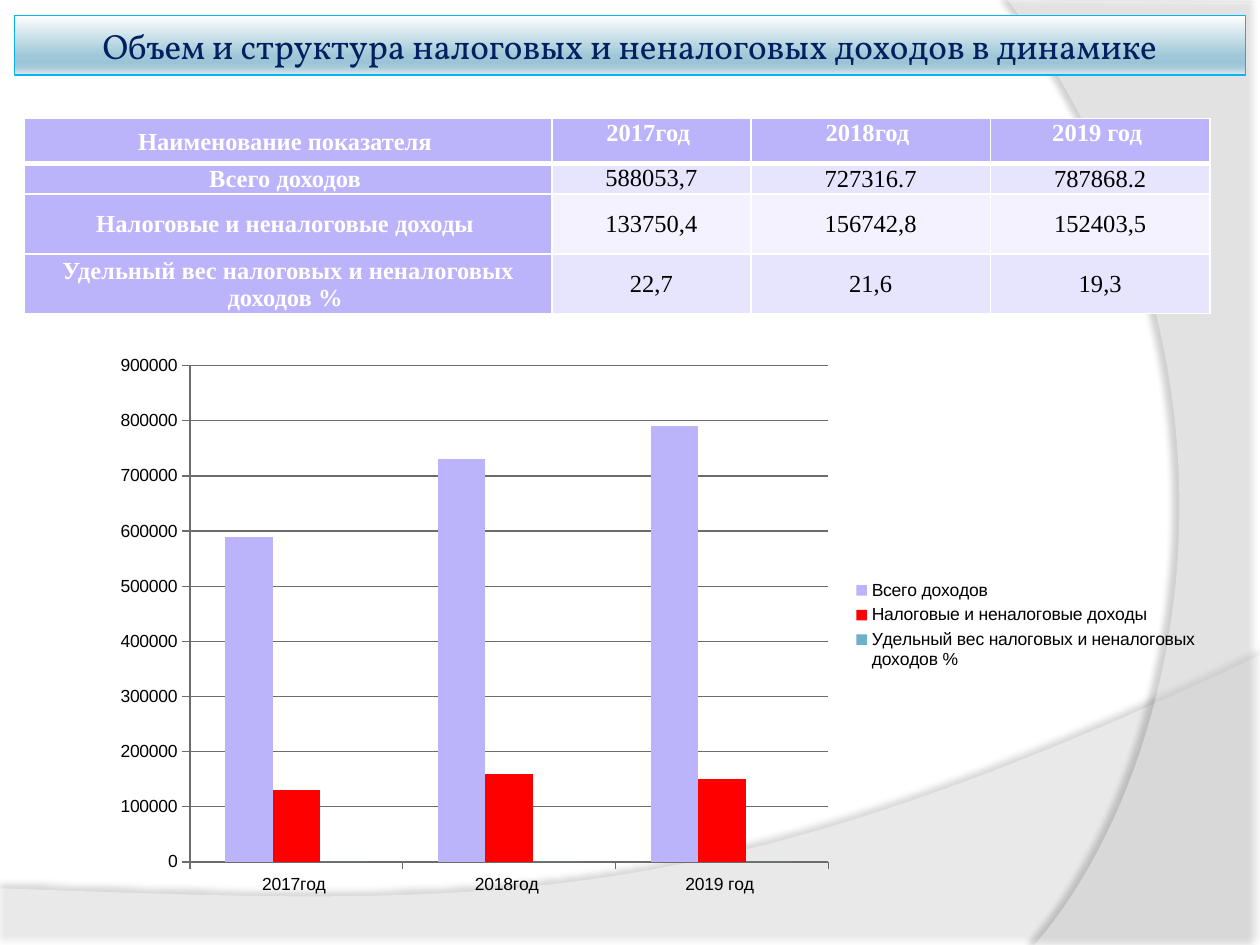
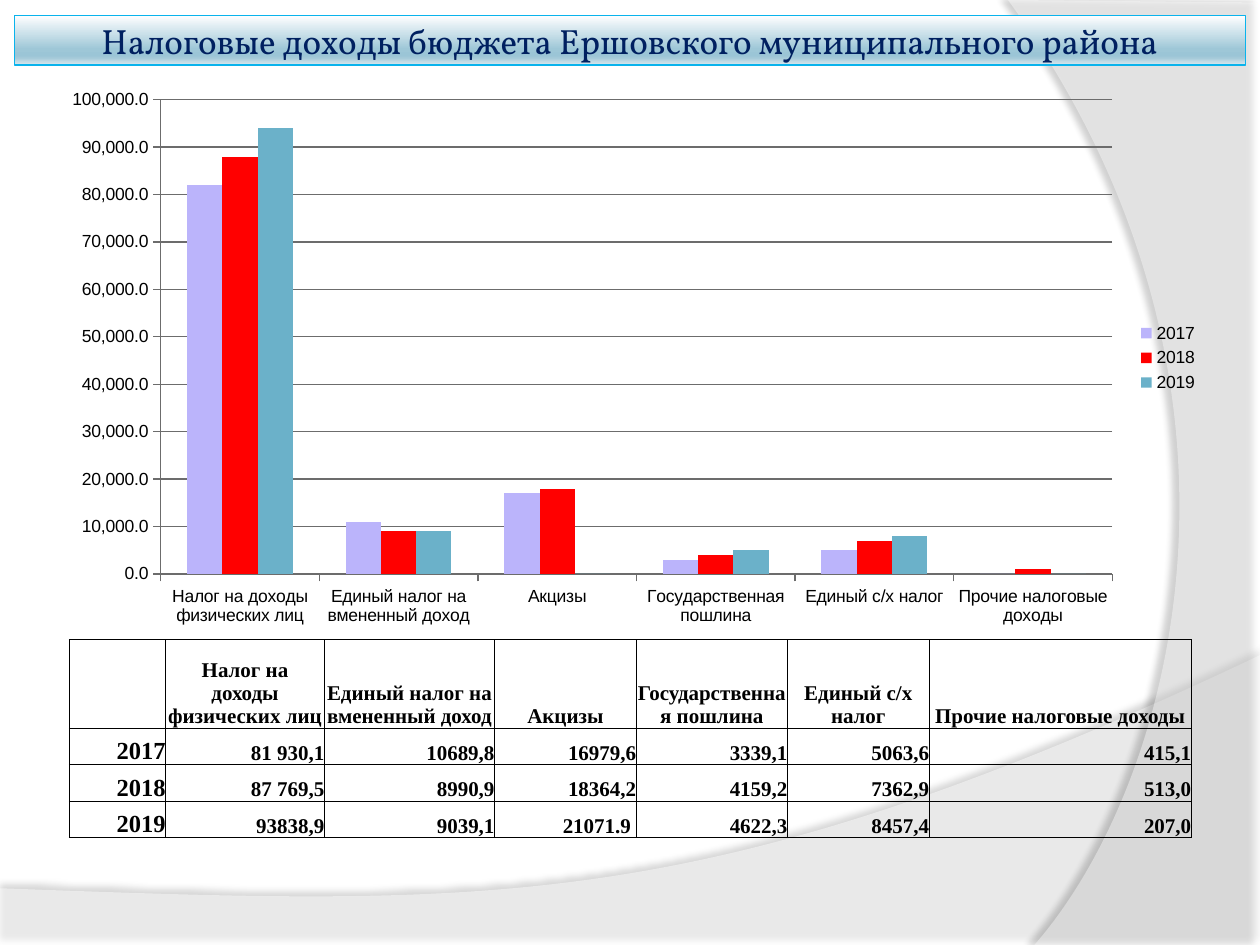
from collections.abc import Callable
from dataclasses import dataclass

from lxml import etree
from pptx import Presentation
from pptx.chart.data import CategoryChartData
from pptx.dml.color import RGBColor
from pptx.enum.chart import XL_CHART_TYPE, XL_LEGEND_POSITION, XL_TICK_MARK
from pptx.enum.text import MSO_ANCHOR, MSO_AUTO_SIZE, PP_ALIGN
from pptx.oxml.ns import qn
from pptx.util import Emu, Inches, Pt

CLUSTERED = XL_CHART_TYPE.COLUMN_CLUSTERED
LEGEND_RIGHT = XL_LEGEND_POSITION.RIGHT
TICK_OUTSIDE = XL_TICK_MARK.OUTSIDE
CENTER, RIGHT = PP_ALIGN.CENTER, PP_ALIGN.RIGHT
TOP, MIDDLE, BOTTOM = MSO_ANCHOR.TOP, MSO_ANCHOR.MIDDLE, MSO_ANCHOR.BOTTOM
NO_AUTOFIT = MSO_AUTO_SIZE.NONE

WHITE = RGBColor(0xFF, 0xFF, 0xFF)
BLACK = RGBColor(0x00, 0x00, 0x00)
NAVY = RGBColor(0x00, 0x20, 0x60)
CYAN = RGBColor(0x0A, 0xB3, 0xEC)
LILAC = RGBColor(0xBB, 0xB4, 0xFB)
LILAC_LIGHT = RGBColor(0xE7, 0xE5, 0xFD)
LILAC_PALE = RGBColor(0xF3, 0xF2, 0xFE)
RED = RGBColor(0xFF, 0x00, 0x00)
TEAL = RGBColor(0x6B, 0xB1, 0xC9)
AXIS_GREY = RGBColor(0x6C, 0x6C, 0x6C)
SERIES_COLORS = (LILAC, RED, TEAL)
BAND_STOPS = (
    (0, RGBColor(0xFE, 0xFE, 0xFF)),
    (68, RGBColor(0x9E, 0xC7, 0xD7)),
    (81, RGBColor(0x9B, 0xC5, 0xD6)),
    (86, RGBColor(0xA5, 0xCA, 0xD9)),
    (100, RGBColor(0xDA, 0xE8, 0xEE)),
)

TITLE_FONT, TABLE_FONT, CHART_FONT = "Vollkorn", "Times New Roman", "Arial"

# The slide is a grid of 100 columns by 75 rows of square cells.
GRID_COLUMNS, GRID_ROWS = 100, 75
CELL = Inches(0.1)
TITLE_ONLY = 5

Point = tuple[float, float]


@dataclass(frozen=True)
class Area:
    left: float
    top: float
    width: float
    height: float

    def emu(self) -> tuple[Emu, ...]:
        return tuple(map(grid, (self.left, self.top, self.width, self.height)))


@dataclass(frozen=True)
class Wave:
    """A backdrop outline: straight corners, then a Bezier curve from the last one."""
    corners: tuple[Point, ...]
    controls: tuple[Point, Point]
    end: Point
    opacity: int
    shadow_opacity: int
    shadow_distance: float
    shadow_angle: int


@dataclass(frozen=True)
class CellLook:
    size: int
    color: RGBColor
    bold: bool
    align: PP_ALIGN
    anchor: MSO_ANCHOR
    insets: tuple[float, float, float, float]
    border: RGBColor
    border_width: float
    bottom_width: float
    fill: RGBColor | None = None


@dataclass(frozen=True)
class Report:
    title: str
    band: Area
    indicators: list[list[str]]
    table_area: Area
    widths: tuple[float, ...]
    heights: tuple[float, ...]
    look: Callable[[int, int], CellLook]
    chart_area: Area
    axis_max: int
    axis_step: int
    axis_format: str
    unplotted: frozenset[tuple[int, int]] = frozenset()


def grid(cells: float) -> Emu:
    return Emu(round(cells * CELL))


def income_look(row: int, column: int) -> CellLook:
    heading = row == 0 or column == 0
    raised = (row == 0 and column > 0) or (row, column) == (1, 1)
    body_fill = LILAC_LIGHT if row % 2 else LILAC_PALE
    return CellLook(
        size=14, color=WHITE if heading else BLACK, bold=heading, align=CENTER,
        anchor=TOP if raised else MIDDLE, insets=(0.1, 0.1, 0.1, 0),
        border=WHITE, border_width=1, bottom_width=1 if row else 3,
        fill=LILAC if heading else body_fill)


def tax_look(row: int, column: int) -> CellLook:
    return CellLook(
        size=12 if column else 14, color=BLACK, bold=True,
        align=RIGHT if row else CENTER, anchor=BOTTOM, insets=(0, 0, 0, 0),
        border=BLACK, border_width=0.5, bottom_width=0.5)


WAVES = (
    Wave(((0, 70.5), (0, 75), (100, 75), (100, 52)),
         ((55.9, 72.9), (39.1, 71.9)), (0, 70.5), 45, 35, 3.5, 270),
    Wave(((100, 0.2), (100, 75), (82.1, 75)),
         ((93.5, 61.9), (101.8, 30)), (80, 0), 40, 45, 4, 180),
)

REPORTS = (
    Report(
        title="Объем и структура налоговых и неналоговых доходов в динамике",
        band=Area(1.15, 1.25, 97.7, 4.7),
        indicators=[
            ["Наименование показателя ", "2017год ", "2018год ", "2019 год "],
            ["Всего доходов ", "588053,7", "727316.7", "787868.2"],
            ["Налоговые и неналоговые доходы ", "133750,4", "156742,8", "152403,5"],
            ["Удельный вес налоговых и неналоговых доходов % ", "22,7", "21,6", "19,3"],
        ],
        table_area=Area(1.95, 9.4, 94.1, 15.5),
        widths=(41.85, 15.8, 19, 17.45), heights=(3.6, 2.4, 4.75, 4.75),
        look=income_look, chart_area=Area(7.8, 27.35, 88.3, 44.5),
        axis_max=900000, axis_step=100000, axis_format="General"),
    Report(
        title="Налоговые доходы бюджета Ершовского муниципального района",
        band=Area(1.15, 1.25, 97.7, 3.9),
        indicators=[
            ["", "Налог на доходы физических лиц", "Единый налог на вмененный доход",
             "Акцизы", "Государственная пошлина", "Единый с/х налог",
             "Прочие налоговые доходы"],
            ["2017", "81 930,1", "10689,8", "16979,6", "3339,1", "5063,6", "415,1"],
            ["2018", "87 769,5", "8990,9", "18364,2", "4159,2", "7362,9", "513,0"],
            ["2019", "93838,9", "9039,1", "21071.9 ", "4622,3", "8457,4", "207,0"],
        ],
        table_area=Area(5.5, 50.75, 89.05, 15.75),
        widths=(7.65, 12.6, 13.5, 11.25, 12, 11.25, 20.8), heights=(7.05, 2.9, 2.9, 2.9),
        look=tax_look, chart_area=Area(3.9, 6.25, 92.2, 44.3),
        axis_max=100000, axis_step=10000, axis_format="#,##0.0",
        unplotted=frozenset({(3, 3)})),
)


def add_color(parent, color: RGBColor, opacity: int = 100) -> None:
    node = etree.SubElement(parent, qn("a:srgbClr"), val=str(color))
    if opacity < 100:
        etree.SubElement(node, qn("a:alpha"), val=str(opacity * 1000))


def bend_last_side(shape, controls: tuple[Point, Point]) -> None:
    """Turns the last straight side of a freeform into a Bezier curve."""
    side = list(shape.element.iter(qn("a:lnTo")))[-1]
    side.tag = qn("a:cubicBezTo")
    for position, (x, y) in enumerate(controls):
        side.insert(position, etree.Element(
            qn("a:pt"), x=str(grid(x) - shape.left), y=str(grid(y) - shape.top)))


def add_wave(slide, wave: Wave):
    first, *rest = [(grid(x), grid(y)) for x, y in (*wave.corners, wave.end)]
    builder = slide.shapes.build_freeform(*first)
    builder.add_line_segments(rest, close=True)
    shape = builder.convert_to_shape()
    bend_last_side(shape, wave.controls)
    shape.fill.solid()
    shape.fill.fore_color.rgb = WHITE
    tint = shape.element.spPr.find(qn("a:solidFill"))[0]
    etree.SubElement(tint, qn("a:alpha"), val=str(wave.opacity * 1000))
    shape.line.fill.background()
    shape.shadow.inherit = False
    effects = shape.element.spPr.find(qn("a:effectLst"))
    shadow = etree.SubElement(
        effects, qn("a:outerShdw"), blurRad=str(Pt(4)),
        dist=str(Pt(wave.shadow_distance)), dir=str(wave.shadow_angle * 60000),
        algn="ctr", rotWithShape="0")
    add_color(shadow, BLACK, wave.shadow_opacity)
    return shape


def set_backdrop(layout, slide) -> None:
    """Builds the waves on a slide and moves them behind the layout's placeholders."""
    for position, wave in enumerate(WAVES, start=2):
        layout.shapes.element.insert(position, add_wave(slide, wave).element)


def add_run(paragraph, text: str, font: str, size: int, color: RGBColor,
            bold: bool = False) -> None:
    run = paragraph.add_run()
    run.text = text
    run.font.name, run.font.size, run.font.bold = font, Pt(size), bold
    run.font.color.rgb = color


def set_title(slide, text: str, band: Area) -> None:
    title = slide.shapes.title
    title.left, title.top, title.width, title.height = band.emu()
    title.fill.gradient()
    title.fill.gradient_angle = 270
    stops = title.element.spPr.find(qn("a:gradFill")).find(qn("a:gsLst"))
    stops.clear()
    for share, color in BAND_STOPS:
        add_color(etree.SubElement(stops, qn("a:gs"), pos=str(share * 1000)), color)
    title.line.color.rgb = CYAN
    title.line.width = Pt(0.75)
    frame = title.text_frame
    frame.auto_size, frame.word_wrap, frame.vertical_anchor = NO_AUTOFIT, True, MIDDLE
    frame.margin_left = frame.margin_right = grid(0.5)
    frame.margin_top = frame.margin_bottom = grid(0.5)
    frame.paragraphs[0].alignment = CENTER
    add_run(frame.paragraphs[0], text, TITLE_FONT, 20, NAVY)


def format_cell(cell, text: str, look: CellLook) -> None:
    if look.fill is None:
        cell.fill.background()
    else:
        cell.fill.solid()
        cell.fill.fore_color.rgb = look.fill
    cell.vertical_anchor = look.anchor
    (cell.margin_left, cell.margin_top,
     cell.margin_right, cell.margin_bottom) = map(grid, look.insets)
    for position, side in enumerate("LRTB"):
        width = look.bottom_width if side == "B" else look.border_width
        edge = etree.Element(qn(f"a:ln{side}"), w=str(Pt(width)))
        add_color(etree.SubElement(edge, qn("a:solidFill")), look.border)
        cell._tc.get_or_add_tcPr().insert(position, edge)
    if text:
        paragraph = cell.text_frame.paragraphs[0]
        paragraph.alignment = look.align
        add_run(paragraph, text, TABLE_FONT, look.size, look.color, look.bold)


def add_indicators(slide, report: Report) -> None:
    table = slide.shapes.add_table(
        len(report.heights), len(report.widths), *report.table_area.emu()).table
    table.first_row = table.horz_banding = False
    for column, width in zip(table.columns, report.widths):
        column.width = grid(width)
    for row, height in zip(table.rows, report.heights):
        row.height = grid(height)
    for r, texts in enumerate(report.indicators):
        for c, text in enumerate(texts):
            format_cell(table.cell(r, c), text, report.look(r, c))


def rounded(figure: str, step: int) -> int:
    return round(float(figure.replace(" ", "").replace(",", ".")) / step) * step


def add_dynamics(slide, report: Report) -> None:
    header, *rows = report.indicators
    precision = report.axis_step // 10
    data = CategoryChartData(number_format=report.axis_format)
    data.categories = header[1:]
    for r, (name, *figures) in enumerate(rows, start=1):
        data.add_series(name, [
            0 if (r, c) in report.unplotted else rounded(figure, precision)
            for c, figure in enumerate(figures, start=1)])
    chart = slide.shapes.add_chart(CLUSTERED, *report.chart_area.emu(), data).chart
    chart.font.name, chart.font.size = CHART_FONT, Pt(10)
    chart.font.color.rgb = BLACK
    chart.has_title = False
    chart.has_legend = True
    chart.legend.position = LEGEND_RIGHT
    chart.legend.include_in_layout = False
    plot = chart.plots[0]
    plot.vary_by_categories, plot.gap_width, plot.overlap = False, 150, 0
    for series, color in zip(plot.series, SERIES_COLORS):
        series.format.fill.solid()
        series.format.fill.fore_color.rgb = color
    values = chart.value_axis
    values.minimum_scale, values.maximum_scale = 0, report.axis_max
    values.major_unit = report.axis_step
    values.has_major_gridlines = True
    values.tick_labels.number_format = report.axis_format
    values.tick_labels.number_format_is_linked = False
    for axis in (values, chart.category_axis):
        axis.major_tick_mark = TICK_OUTSIDE
    for lines in (values, chart.category_axis, values.major_gridlines):
        lines.format.line.color.rgb = AXIS_GREY
        lines.format.line.width = Pt(0.75)


def main() -> None:
    deck = Presentation()
    deck.slide_width, deck.slide_height = grid(GRID_COLUMNS), grid(GRID_ROWS)
    layout = deck.slide_layouts[TITLE_ONLY]
    for report in REPORTS:
        slide = deck.slides.add_slide(layout)
        set_title(slide, report.title, report.band)
        add_indicators(slide, report)
        add_dynamics(slide, report)
    set_backdrop(layout, slide)
    deck.save("out.pptx")


if __name__ == "__main__":
    main()
